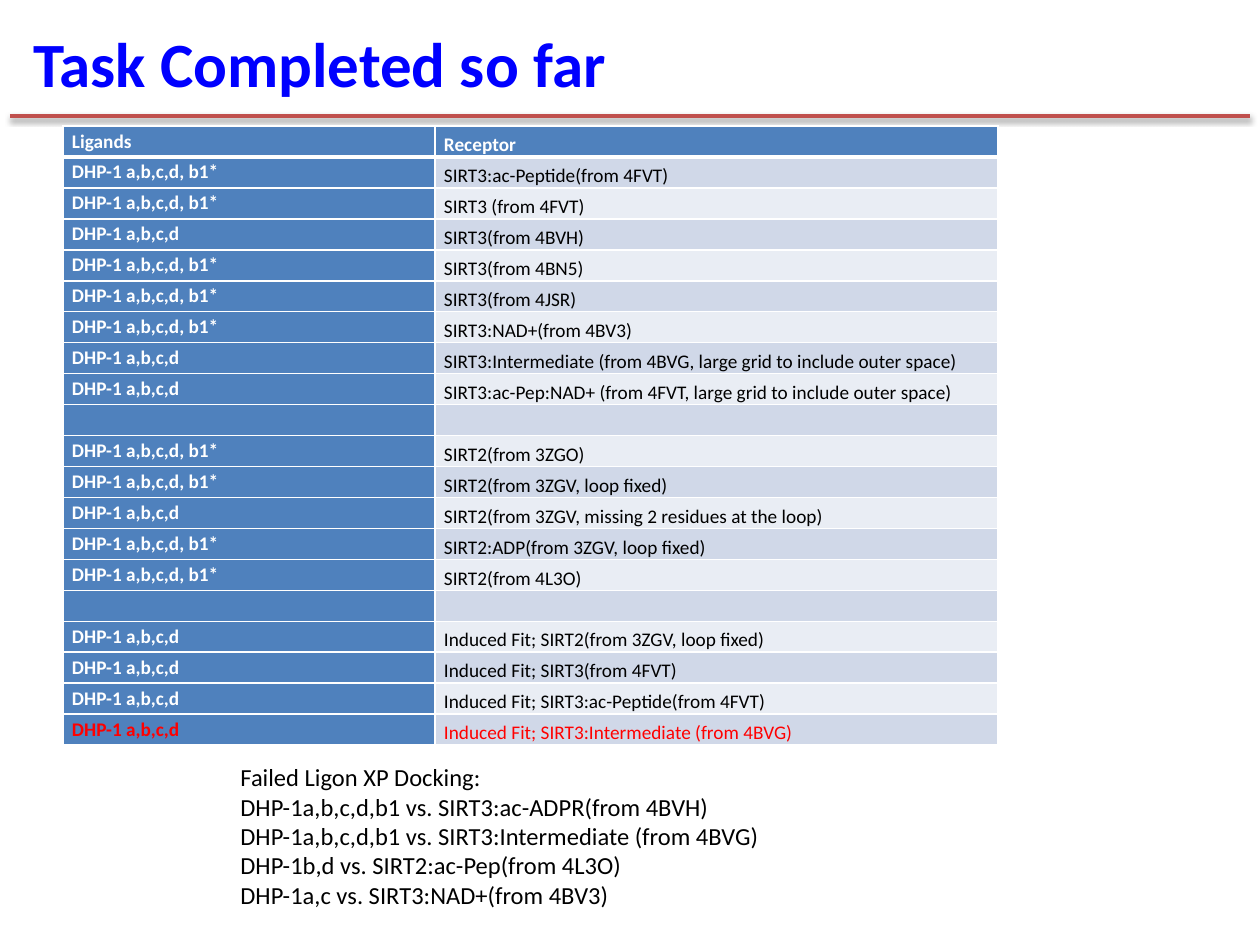
from lxml.etree import SubElement
from pptx import Presentation
from pptx.dml.color import RGBColor
from pptx.enum.shapes import MSO_CONNECTOR as Connector
from pptx.enum.text import MSO_ANCHOR as Anchor
from pptx.oxml import parse_xml
from pptx.oxml.ns import nsdecls, qn
from pptx.util import Emu, Pt

SCALE = 914400 / 126
FULL = "DHP-1 a,b,c,d, b1*"
BASIC = "DHP-1 a,b,c,d"
ROWS = [
    ("Ligands", "Receptor"),
    (FULL, "SIRT3:ac-Peptide(from 4FVT)"),
    (FULL, "SIRT3 (from 4FVT)"),
    (BASIC, "SIRT3(from 4BVH)"),
    (FULL, "SIRT3(from 4BN5)"),
    (FULL, "SIRT3(from 4JSR)"),
    (FULL, "SIRT3:NAD+(from 4BV3)"),
    (BASIC, "SIRT3:Intermediate (from 4BVG, large grid to include outer space)"),
    (BASIC, "SIRT3:ac-Pep:NAD+ (from 4FVT, large grid to include outer space)"),
    ("", ""),
    (FULL, "SIRT2(from 3ZGO)"),
    (FULL, "SIRT2(from 3ZGV, loop fixed)"),
    (BASIC, "SIRT2(from 3ZGV, missing 2 residues at the loop)"),
    (FULL, "SIRT2:ADP(from 3ZGV, loop fixed)"),
    (FULL, "SIRT2(from 4L3O)"),
    ("", ""),
    (BASIC, "Induced Fit; SIRT2(from 3ZGV, loop fixed)"),
    (BASIC, "Induced Fit; SIRT3(from 4FVT)"),
    (BASIC, "Induced Fit; SIRT3:ac-Peptide(from 4FVT)"),
    (BASIC, "Induced Fit; SIRT3:Intermediate (from 4BVG)"),
]
FAILED = [
    "Failed Ligon XP Docking:",
    "DHP-1a,b,c,d,b1 vs. SIRT3:ac-ADPR(from 4BVH)",
    "DHP-1a,b,c,d,b1 vs. SIRT3:Intermediate (from 4BVG)",
    "DHP-1b,d vs. SIRT2:ac-Pep(from 4L3O)",
    "DHP-1a,c vs. SIRT3:NAD+(from 4BV3)",
]


def px(*lengths):
    return [Emu(round(length * SCALE)) for length in lengths]


def style(frame, size, color, bold=False):
    for para in frame.paragraphs:
        for span in para.runs:
            span.font.name = "Calibri"
            span.font.size = Pt(size)
            span.font.bold = bold
            span.font.color.rgb = RGBColor.from_string(color)


deck = Presentation()
deck.slide_width, deck.slide_height = px(1260, 945)
page = deck.slides.add_slide(deck.slide_layouts[6])

rule = page.shapes.add_connector(Connector.STRAIGHT, *px(10, 116, 1250, 116))
rule.line.color.rgb = RGBColor.from_string("C0504D")
rule.line.width = Pt(2)
rule._element.spPr.append(parse_xml(
    f'<a:effectLst {nsdecls("a")}>'
    '<a:outerShdw blurRad="40000" dist="20000" dir="5400000" rotWithShape="0">'
    '<a:srgbClr val="000000"><a:alpha val="38000"/></a:srgbClr>'
    '</a:outerShdw></a:effectLst>'))

title = page.shapes.add_textbox(*px(21, 13, 911, 98)).text_frame
title.word_wrap = True
title.vertical_anchor = Anchor.MIDDLE
title.text = "Task Completed so far"
style(title, 36, "0000FF", True)

table = page.shapes.add_table(len(ROWS), 2, *px(63, 126, 935, 620)).table
table.columns[0].width, table.columns[1].width = px(372, 563)
last = len(ROWS) - 1
for row, texts in enumerate(ROWS):
    table.rows[row].height = px(31)[0]
    for col, text in enumerate(texts):
        cell = table.cell(row, col)
        cell.margin_left, cell.margin_right, cell.margin_top, cell.margin_bottom = px(9, 9, 0, 0)
        cell.vertical_anchor = Anchor.BOTTOM if col else Anchor.TOP
        cell.text = text
        para = cell.text_frame.paragraphs[0]
        para.line_spacing = 1.15
        head = row == 0 or col == 0
        color = "FF0000" if row == last else "FFFFFF" if head else "000000"
        style(cell.text_frame, 11, color, head)
        if not text:
            SubElement(para._p, qn("a:endParaRPr"), sz="1100")
        for side in "LRTB":
            thick = (row, side) in ((0, "B"), (1, "T"))
            cell._tc.get_or_add_tcPr().append(parse_xml(
                f'<a:ln{side} {nsdecls("a")} w="{Pt(3 if thick else 1)}">'
                '<a:solidFill><a:srgbClr val="FFFFFF"/></a:solidFill>'
                f'</a:ln{side}>'))
        cell.fill.solid()
        band = "D0D8E8" if row % 2 else "E9EDF4"
        cell.fill.fore_color.rgb = RGBColor.from_string("4F81BD" if head else band)

failures = page.shapes.add_textbox(*px(228, 756, 549, 161)).text_frame
failures.word_wrap = False
failures.text = "\n".join(FAILED)
style(failures, 14, "000000")

deck.save("out.pptx")
